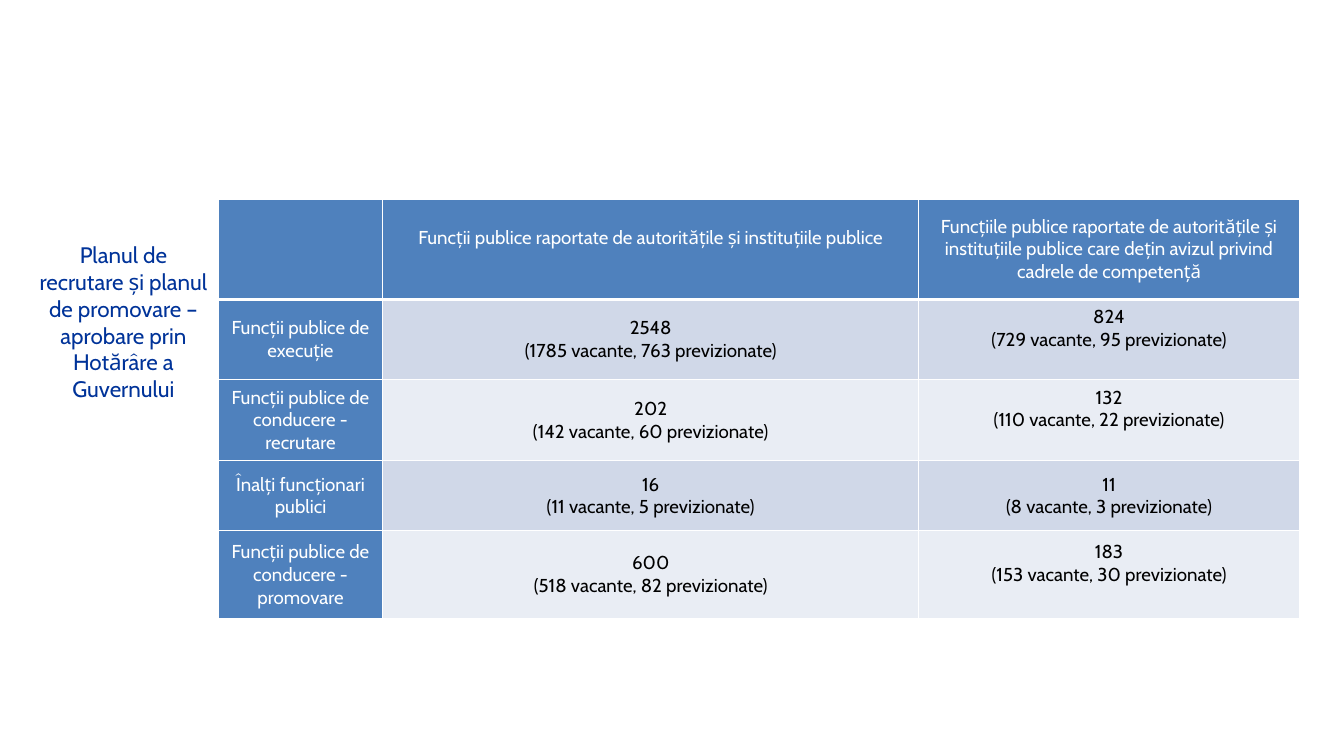
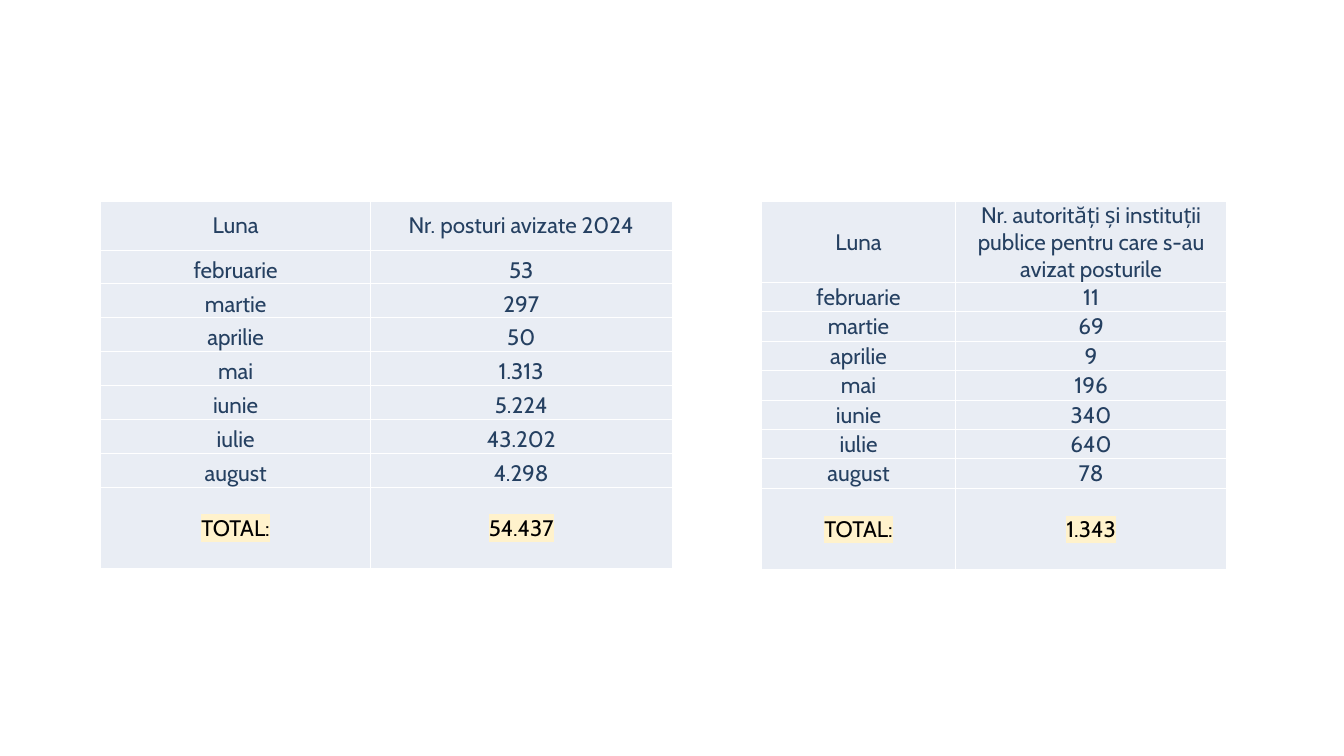
from dataclasses import dataclass

from lxml import etree
from pptx import Presentation
from pptx import util as u
from pptx.dml.color import RGBColor
from pptx.enum import text
from pptx.oxml import ns

FONT = "Cabin"
WHITE, BLACK, BLUE, NAVY = "FFFFFF", "000000", "003399", "254061"
HEADER_FILL, DARK_BAND, LIGHT_BAND, HIGHLIGHT = "4F81BD", "D0D8E8", "E9EDF4", "FFF2CC"
MIDDLE, BOTTOM = text.MSO_ANCHOR.MIDDLE, text.MSO_ANCHOR.BOTTOM
RAISED = 0.85

PLAN_HEADERS = [
    "",
    "Funcții publice raportate de autoritățile și instituțiile publice",
    "Funcțiile publice raportate de autoritățile și instituțiile publice "
    "care dețin avizul privind cadrele de competență",
]
PLAN_ROWS = [
    ("Funcții publice de execuție",
     "2548\n(1785 vacante, 763 previzionate)", "824\n(729 vacante, 95 previzionate)"),
    ("Funcții publice de conducere - recrutare",
     "202\n(142 vacante, 60 previzionate)", "132\n(110 vacante, 22 previzionate)"),
    ("Înalți funcționari publici",
     "16\n(11 vacante, 5 previzionate)", "11\n(8 vacante, 3 previzionate)"),
    ("Funcții publice de conducere - promovare",
     "600\n(518 vacante, 82 previzionate)", "183\n(153 vacante, 30 previzionate)"),
]
MONTHS = ["februarie", "martie", "aprilie", "mai", "iunie", "iulie", "august"]
POSTS = ["53", "297", "50", "1.313", "5.224", "43.202", "4.298"]
INSTITUTIONS = ["11", "69", "9", "196", "340", "640", "78"]


@dataclass
class Box:
    """A rectangle in centimetres."""
    left: float
    top: float
    width: float
    height: float

    def lengths(self):
        """Return the rectangle as slide lengths."""
        return [u.Cm(side) for side in (self.left, self.top, self.width, self.height)]


def colour(value):
    """Turn a hex string into a colour."""
    return RGBColor.from_string(value)


def style_text(frame, size, ink, highlight=None):
    """Centre the text and set its font, size, colour and highlight."""
    for para in frame.paragraphs:
        para.alignment = text.PP_ALIGN.CENTER
        for span in para.runs:
            span.font.size = u.Pt(size)
            span.font.name = FONT
            span.font.color.rgb = colour(ink)
            if highlight:
                marker = etree.Element(ns.qn("a:highlight"))
                etree.SubElement(marker, ns.qn("a:srgbClr"), val=highlight)
                span.font._element.find(ns.qn("a:solidFill")).addnext(marker)


def draw_borders(cell, bottom_width):
    """Draw white lines on the four sides of a cell."""
    properties = cell._tc.get_or_add_tcPr()
    for side, width in (("L", 1), ("R", 1), ("T", 1), ("B", bottom_width)):
        line = etree.SubElement(properties, ns.qn("a:ln" + side), w=str(u.Pt(width)))
        fill = etree.SubElement(line, ns.qn("a:solidFill"))
        etree.SubElement(fill, ns.qn("a:srgbClr"), val=WHITE)


def fill_cell(cell, words, fill, size, ink, margins, anchor=MIDDLE,
              highlight=None, bottom_width=1):
    """Write one cell with its lines, fill and margins."""
    draw_borders(cell, bottom_width)
    cell.fill.solid()
    cell.fill.fore_color.rgb = colour(fill)
    cell.margin_left, cell.margin_top, cell.margin_right, cell.margin_bottom = (
        u.Cm(margin) for margin in margins)
    cell.vertical_anchor = anchor
    cell.text_frame.text = words
    style_text(cell.text_frame, size, ink, highlight)


def add_grid(page, box, widths, heights):
    """Add a plain table with the given column widths and row heights."""
    table = page.shapes.add_table(len(heights), len(widths), *box.lengths()).table
    table.first_row = table.horz_banding = False
    for column, width in zip(table.columns, widths):
        column.width = u.Cm(width)
    for row, height in zip(table.rows, heights):
        row.height = u.Cm(height)
    return table


def add_plan_title(page, box):
    """Write the title beside the plan table."""
    frame = page.shapes.add_textbox(*box.lengths()).text_frame
    frame.word_wrap = True
    frame.text = ("Planul de recrutare și planul de promovare – "
                  "aprobare prin Hotărâre a Guvernului")
    style_text(frame, 24, BLUE)


def add_plan_table(page, box):
    """Build the table of recruitment and promotion figures."""
    widths = [6.2, 20.27]
    widths.append(box.width - sum(widths))
    table = add_grid(page, box, widths, [3.81, 3.02, 3.07, 2.64, 3.33])
    raised_cells = {(0, 1), (1, 2), (2, 2), (4, 2)}
    for row, line in enumerate([PLAN_HEADERS, *PLAN_ROWS]):
        for column, words in enumerate(line):
            is_header = row == 0 or column == 0
            band = DARK_BAND if row % 2 else LIGHT_BAND
            lift = RAISED if (row, column) in raised_cells else 0
            fill_cell(table.cell(row, column), words,
                      HEADER_FILL if is_header else band, 20,
                      WHITE if is_header else BLACK, (0.18, 0, 0.18, lift),
                      bottom_width=1 if row else 3)


def add_month_table(page, box, first_width, header_height, month_height,
                    value_header, values, total, month_anchor):
    """Build a table of monthly values that ends with a total."""
    total_height = box.height - header_height - len(MONTHS) * month_height
    heights = [header_height, *[month_height] * len(MONTHS), total_height]
    table = add_grid(page, box, [first_width, box.width - first_width], heights)
    lines = [("Luna", value_header), *zip(MONTHS, values), ("TOTAL:", total)]
    for row, line in enumerate(lines):
        is_total = row == len(lines) - 1
        is_month = 0 < row < len(lines) - 1
        for column, words in enumerate(line):
            fill_cell(table.cell(row, column), words, LIGHT_BAND, 24,
                      BLACK if is_total else NAVY, (0.03, 0.03, 0.03, 0),
                      month_anchor if is_month else MIDDLE,
                      HIGHLIGHT if is_total else None)


def build_plan_page(page):
    """Build the page on the recruitment and promotion plans."""
    add_plan_title(page, Box(1.17, 8.99, 6.99, 8.2))
    add_plan_table(page, Box(8.26, 7.52, 40.85, 15.87))


def build_months_page(page):
    """Build the page with the two monthly tables."""
    top, height = 7.6, 13.89
    add_month_table(page, Box(3.81, top, 21.59, height), 10.19, 1.85, 1.28,
                    "Nr. posturi avizate 2024", POSTS, "54.437", BOTTOM)
    add_month_table(page, Box(28.78, top, 17.58, height), 7.34, 3.04, 1.11,
                    "Nr. autorități și instituții publice pentru care s-au avizat posturile",
                    INSTITUTIONS, "1.343", MIDDLE)


def main():
    """Build and save the deck."""
    deck = Presentation()
    deck.slide_width, deck.slide_height = u.Cm(50.8), u.Cm(28.58)
    for build_page in (build_plan_page, build_months_page):
        build_page(deck.slides.add_slide(deck.slide_layouts[6]))
    deck.save("out.pptx")


if __name__ == "__main__":
    main()
